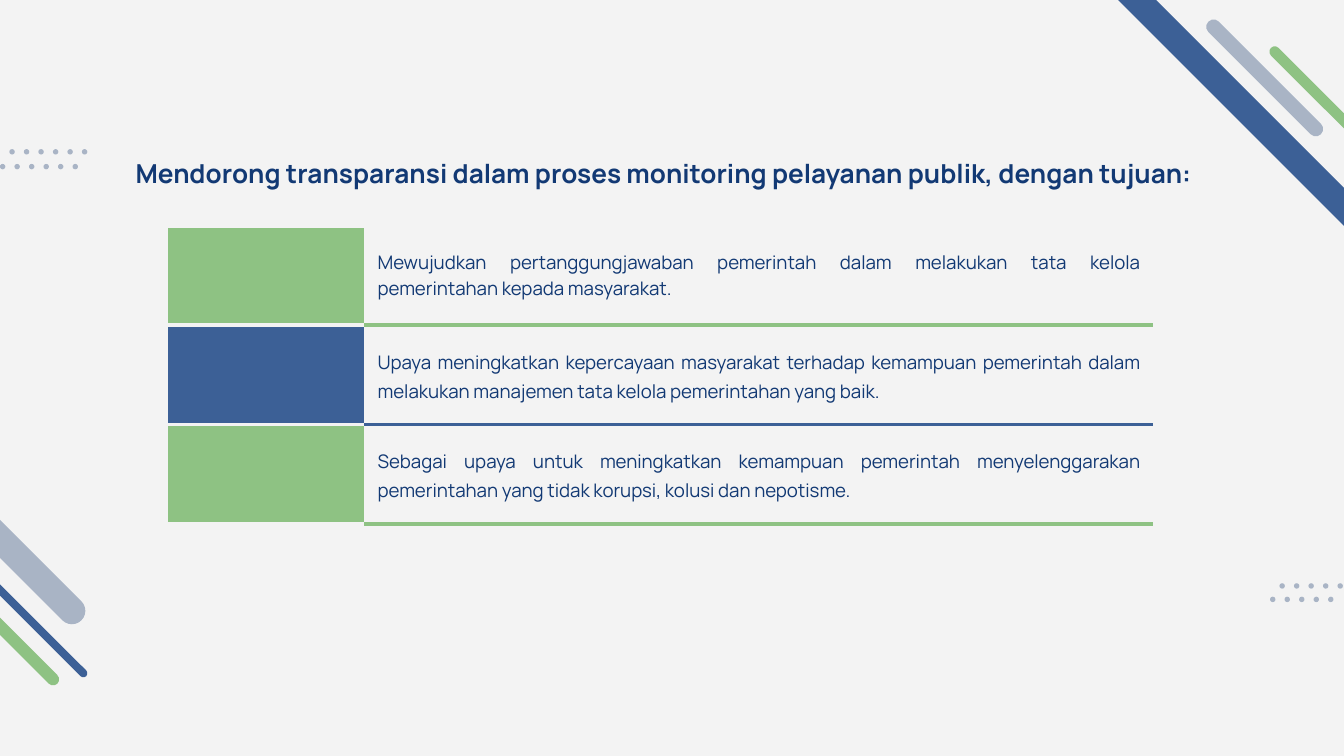
from math import sqrt

from lxml import etree
from pptx import Presentation
from pptx.dml.color import RGBColor
from pptx.enum.shapes import MSO_SHAPE
from pptx.enum.text import MSO_ANCHOR, PP_ALIGN
from pptx.oxml.ns import qn
from pptx.util import Inches, Pt

ROUNDED, OVAL = MSO_SHAPE.ROUNDED_RECTANGLE, MSO_SHAPE.OVAL
CENTER, JUSTIFY = PP_ALIGN.CENTER, PP_ALIGN.JUSTIFY
MIDDLE = MSO_ANCHOR.MIDDLE

FONT = "Manrope"
PAPER, NAVY = "F3F3F3", "123974"
GREEN, BLUE, GREY = "8EC283", "3C6096", "A9B4C5"
NO_TABLE_STYLE = "{2D5ABB26-0587-4C30-8999-92F81FD0307C}"

presentation = Presentation()
presentation.slide_width = Inches(10)
presentation.slide_height = Inches(10 * 9 / 16)
slide = presentation.slides.add_slide(presentation.slide_layouts[6])
slide.background.fill.solid()
slide.background.fill.fore_color.rgb = RGBColor.from_string(PAPER)


def add_filled(kind, left, top, width, height, color):
    shape = slide.shapes.add_shape(
        kind, Inches(left), Inches(top), Inches(width), Inches(height))
    shape.shadow.inherit = False
    shape.fill.solid()
    shape.fill.fore_color.rgb = RGBColor.from_string(color)
    shape.line.fill.background()
    return shape


def set_borders(cell, **colors):
    """Draw 2.25 pt borders on the given sides; call before setting the fill."""
    for side, color in colors.items():
        line = etree.SubElement(cell._tc.get_or_add_tcPr(), qn(f"a:ln{side}"),
                                w=str(Pt(2.25)))
        fill = etree.SubElement(line, qn("a:solidFill"))
        etree.SubElement(fill, qn("a:srgbClr"), val=color)


# Diagonal bars: centre x, centre y, width of the box they span, thickness
bars = [
    (9.96, 0.86, 1.03, 0.08, GREEN),
    (9.41, 0.58, 0.87, 0.11, GREY),
    (9.26, 0.80, 2.05, 0.20, BLUE),
    (0.26, 4.65, 0.78, 0.06, BLUE),
    (-0.16, 4.50, 1.20, 0.09, GREEN),
    (-0.39, 3.62, 2.05, 0.20, GREY),
]
for center_x, center_y, span, thickness, color in bars:
    length = (span - thickness) * sqrt(2) + thickness
    bar = add_filled(ROUNDED, center_x - length / 2, center_y - thickness / 2,
                     length, thickness, color)
    bar.adjustments[0] = 0.5
    bar.rotation = 45

# Rows of dots: left, top, number of dots
DOT, DOT_PITCH = 0.04, 0.108
for left, top, count in [(0.07, 1.11, 6), (0, 1.22, 6),
                         (9.52, 4.34, 5), (9.45, 4.44, 5)]:
    for index in range(count):
        add_filled(OVAL, left + index * DOT_PITCH, top, DOT, DOT, GREY)

title = slide.shapes.add_textbox(Inches(0.79), Inches(1.07), Inches(8.3), Inches(0.33))
frame = title.text_frame
frame.word_wrap = True
frame.margin_top = frame.margin_bottom = Inches(0.1)
paragraph = frame.paragraphs[0]
paragraph.text = ("Mendorong transparansi dalam proses monitoring pelayanan publik, "
                  "dengan tujuan:")
paragraph.alignment = CENTER
paragraph.font.name = FONT
paragraph.font.size = Pt(14)
paragraph.font.bold = True
paragraph.font.color.rgb = RGBColor.from_string(NAVY)

# Goals: colour, line spacing, text
goals = [
    (GREEN, 1.0, "Mewujudkan pertanggungjawaban pemerintah dalam melakukan tata kelola "
                 "pemerintahan kepada masyarakat."),
    (BLUE, 1.15, "Upaya meningkatkan kepercayaan masyarakat terhadap kemampuan pemerintah "
                 "dalam melakukan manajemen tata kelola pemerintahan yang baik."),
    (GREEN, 1.15, "Sebagai upaya untuk meningkatkan kemampuan pemerintah menyelenggarakan "
                  "pemerintahan yang tidak korupsi, kolusi dan nepotisme."),
]
table_frame = slide.shapes.add_table(
    len(goals), 2, Inches(1.25), Inches(1.68), Inches(7.33), Inches(2.22))
table = table_frame.table
table.first_row = table.horz_banding = False
table._tbl.tblPr.find(qn("a:tableStyleId")).text = NO_TABLE_STYLE
table.columns[0].width = Inches(1.46)
table.columns[1].width = Inches(5.87)

color_above = None
for index, (color, spacing, text) in enumerate(goals):
    table.rows[index].height = Inches(0.74)
    marker, goal = table.cell(index, 0), table.cell(index, 1)

    set_borders(marker, T=PAPER, B=PAPER)
    marker.fill.solid()
    marker.fill.fore_color.rgb = RGBColor.from_string(color)

    if color_above:
        set_borders(goal, T=color_above)
    set_borders(goal, B=color)
    goal.fill.background()
    goal.vertical_anchor = MIDDLE
    goal.margin_left = goal.margin_right = Inches(0.1)
    goal.margin_top = goal.margin_bottom = 0
    paragraph = goal.text_frame.paragraphs[0]
    paragraph.text = text
    paragraph.alignment = JUSTIFY
    paragraph.line_spacing = spacing
    paragraph.space_after = Pt(16)
    paragraph.font.name = FONT
    paragraph.font.size = Pt(10)
    paragraph.font.color.rgb = RGBColor.from_string(NAVY)
    color_above = color

presentation.save("out.pptx")
